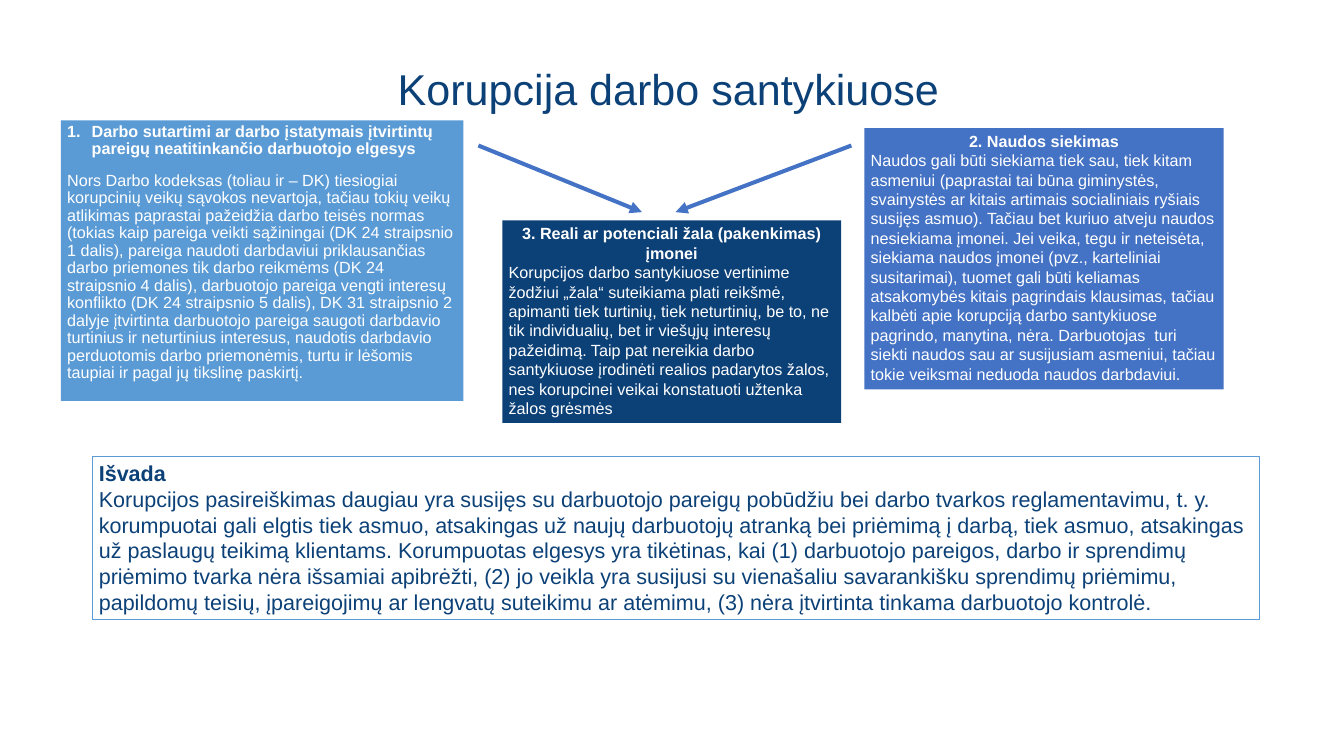
from lxml import etree
from pptx import Presentation
from pptx.dml.color import RGBColor
from pptx.enum.shapes import MSO_CONNECTOR, MSO_SHAPE
from pptx.enum.text import MSO_ANCHOR, MSO_AUTO_SIZE, PP_ALIGN
from pptx.oxml.ns import qn
from pptx.util import Pt

PX = 9144
LEFT, CENTER = PP_ALIGN.LEFT, PP_ALIGN.CENTER
TOP = MSO_ANCHOR.TOP
NO_AUTOSIZE = MSO_AUTO_SIZE.NONE
RECTANGLE = MSO_SHAPE.RECTANGLE
STRAIGHT = MSO_CONNECTOR.STRAIGHT
NAVY, BLUE, SKY, WHITE = "0C4178", "4472C4", "5B9BD5", "FFFFFF"


def color(value):
    return RGBColor.from_string(value)


def add_panel(place, fill, ink, size, heading, body, align):
    box = slide.shapes.add_shape(RECTANGLE, *[n * PX for n in place])
    box.shadow.inherit = False
    box.fill.solid()
    box.fill.fore_color.rgb = color(fill)
    box.line.fill.background()
    frame = box.text_frame
    frame.word_wrap = True
    frame.auto_size = NO_AUTOSIZE
    frame.vertical_anchor = TOP
    frame.text = heading + "\n" + body
    for para, bold, side in zip(frame.paragraphs, (True, False), (align, LEFT)):
        para.alignment = side
        span = para.runs[0]
        span.font.name = "Arial"
        span.font.size = Pt(size)
        span.font.bold = bold
        span.font.color.rgb = color(ink)
    return box


deck = Presentation()
deck.slide_width = 2079 * PX
deck.slide_height = 1169 * PX
slide = deck.slides.add_slide(deck.slide_layouts[5])

title = slide.shapes.title
title.left, title.top, title.width, title.height = [n * PX for n in (143, 100, 1782, 188)]
title.text_frame.text = "Korupcija darbo santykiuose"
title.text_frame.auto_size = NO_AUTOSIZE
title.text_frame.vertical_anchor = TOP
para = title.text_frame.paragraphs[0]
para.alignment = CENTER
para.line_spacing = 0.9
span = para.runs[0]
span.font.name = "Arial"
span.font.size = Pt(48)
span.font.color.rgb = color(NAVY)

conduct = add_panel(
    (94, 186, 623, 434), SKY, WHITE, 18,
    "Darbo sutartimi ar darbo įstatymais įtvirtintų pareigų neatitinkančio darbuotojo elgesys",
    "Nors Darbo kodeksas (toliau ir – DK) tiesiogiai korupcinių veikų sąvokos nevartoja, "
    "tačiau tokių veikų atlikimas paprastai pažeidžia darbo teisės normas (tokias kaip pareiga "
    "veikti sąžiningai (DK 24 straipsnio 1 dalis), pareiga naudoti darbdaviui priklausančias "
    "darbo priemones tik darbo reikmėms (DK 24 straipsnio 4 dalis), darbuotojo pareiga vengti "
    "interesų konflikto (DK 24 straipsnio 5 dalis), DK 31 straipsnio 2 dalyje įtvirtinta "
    "darbuotojo pareiga saugoti darbdavio turtinius ir neturtinius interesus, naudotis "
    "darbdavio perduotomis darbo priemonėmis, turtu ir lėšomis taupiai ir pagal jų tikslinę "
    "paskirtį.",
    LEFT)
heading, body = conduct.text_frame.paragraphs
heading.line_spacing = body.line_spacing = 0.9
body.space_before = Pt(15.6)
settings = heading._p.get_or_add_pPr()
settings.set("marL", str(38 * PX))
settings.set("indent", str(-38 * PX))
etree.SubElement(settings, qn("a:buFont"), typeface="+mj-lt")
etree.SubElement(settings, qn("a:buAutoNum"), type="arabicPeriod")

add_panel(
    (1337, 198, 556, 404), BLUE, WHITE, 18,
    "2. Naudos siekimas",
    "Naudos gali būti siekiama tiek sau, tiek kitam asmeniui (paprastai tai būna giminystės, "
    "svainystės ar kitais artimais socialiniais ryšiais susijęs asmuo). Tačiau bet kuriuo "
    "atveju naudos nesiekiama įmonei. Jei veika, tegu ir neteisėta, siekiama naudos įmonei "
    "(pvz., karteliniai susitarimai), tuomet gali būti keliamas atsakomybės kitais pagrindais "
    "klausimas, tačiau kalbėti apie korupciją darbo santykiuose pagrindo, manytina, nėra. "
    "Darbuotojas  turi siekti naudos sau ar susijusiam asmeniui, tačiau tokie veiksmai neduoda "
    "naudos darbdaviui.",
    CENTER)

add_panel(
    (777, 341, 524, 313), NAVY, WHITE, 18,
    "3. Reali ar potenciali žala (pakenkimas) įmonei",
    "Korupcijos darbo santykiuose vertinime žodžiui „žala“ suteikiama plati reikšmė, apimanti "
    "tiek turtinių, tiek neturtinių, be to, ne tik individualių, bet ir viešųjų interesų "
    "pažeidimą. Taip pat nereikia darbo santykiuose įrodinėti realios padarytos žalos, nes "
    "korupcinei veikai konstatuoti užtenka žalos grėsmės",
    CENTER)

conclusion = add_panel(
    (143, 706, 1805, 252), WHITE, NAVY, 24,
    "Išvada",
    "Korupcijos pasireiškimas daugiau yra susijęs su darbuotojo pareigų pobūdžiu bei darbo "
    "tvarkos reglamentavimu, t. y. korumpuotai gali elgtis tiek asmuo, atsakingas už naujų "
    "darbuotojų atranką bei priėmimą į darbą, tiek asmuo, atsakingas už paslaugų teikimą "
    "klientams. Korumpuotas elgesys yra tikėtinas, kai (1) darbuotojo pareigos, darbo ir "
    "sprendimų priėmimo tvarka nėra išsamiai apibrėžti, (2) jo veikla yra susijusi su "
    "vienašaliu savarankišku sprendimų priėmimu, papildomų teisių, įpareigojimų ar lengvatų "
    "suteikimu ar atėmimu, (3) nėra įtvirtinta tinkama darbuotojo kontrolė.",
    LEFT)
conclusion.line.color.rgb = color(SKY)
conclusion.line.width = Pt(1)

for start, end in ((740, 993), (1317, 1045)):
    arrow = slide.shapes.add_connector(STRAIGHT, start * PX, 225 * PX, end * PX, 328 * PX)
    arrow.line.color.rgb = color(BLUE)
    arrow.line.width = Pt(4.5)
    etree.SubElement(arrow.line._get_or_add_ln(), qn("a:tailEnd"), type="triangle")
    etree.SubElement(arrow._element.spPr, qn("a:effectLst"))

deck.save("out.pptx")
